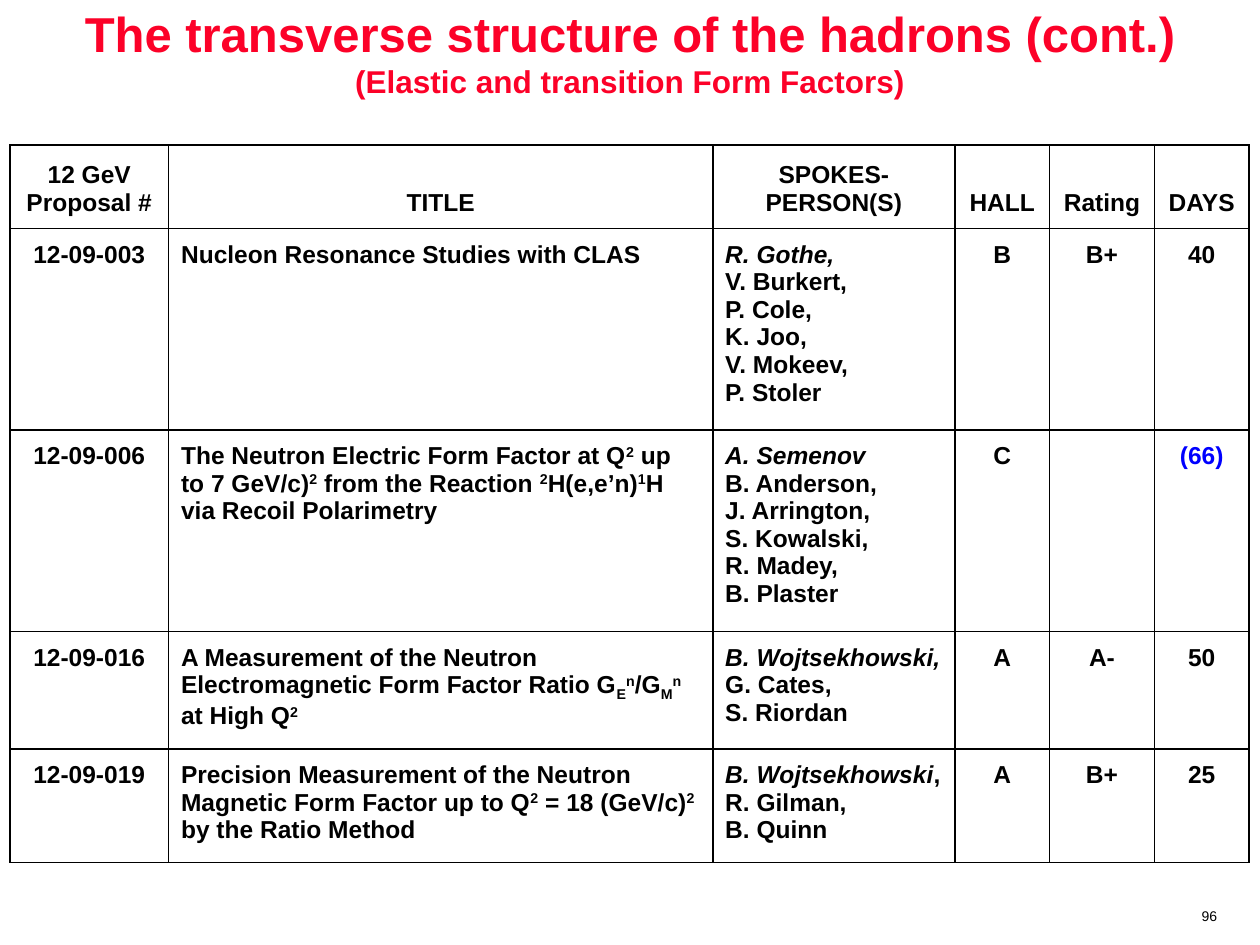
from lxml import etree
from pptx import Presentation
from pptx.dml.color import RGBColor
from pptx.enum.text import MSO_ANCHOR, MSO_AUTO_SIZE, PP_ALIGN
from pptx.oxml.ns import qn
from pptx.util import Cm, Pt

CENTER, LEFT = PP_ALIGN.CENTER, PP_ALIGN.LEFT
TOP, MIDDLE, BOTTOM = MSO_ANCHOR.TOP, MSO_ANCHOR.MIDDLE, MSO_ANCHOR.BOTTOM
NO_AUTOFIT = MSO_AUTO_SIZE.NONE

COLORS = {"heading": "FC0128", "text": "000000", "pending": "0000FF", "border": "000000"}
FONT = "Arial"
BASELINES = {"^": "30000", "_": "-25000"}

HEADING = "The transverse structure of the hadrons (cont.)"
SUBHEADING = "(Elastic and transition Form Factors)"
PAGE_NUMBER = "96"

COLUMNS = [
    ("12 GeV Proposal #", 3.2, CENTER),
    ("TITLE", 10.97, LEFT),
    ("SPOKES-PERSON(S)", 4.88, LEFT),
    ("HALL", 1.91, CENTER),
    ("Rating", 2.11, CENTER),
    ("DAYS", 1.91, CENTER),
]
# "|" separates runs; a run opens with ^ for superscript, _ for subscript, * for italic
PROPOSALS = [
    ("12-09-003", "Nucleon Resonance Studies with CLAS",
     "*R. Gothe,\nV. Burkert,\nP. Cole,\nK. Joo,\nV. Mokeev,\nP. Stoler", "B", "B+", "40"),
    ("12-09-006",
     "The Neutron Electric Form Factor at Q|^2| up to 7 GeV/c)|^2| from the Reaction "
     "|^2|H(e,e’n)|^1|H via Recoil Polarimetry",
     "*A. Semenov\nB. Anderson,\nJ. Arrington,\nS. Kowalski,\nR. Madey,\nB. Plaster", "C", "", "(66)"),
    ("12-09-016",
     "A Measurement of the Neutron Electromagnetic Form Factor Ratio G|_E|^n|/G|_M|^n| at High Q|^2",
     "*B. Wojtsekhowski,\nG. Cates,\nS. Riordan", "A", "A-", "50"),
    ("12-09-019",
     "Precision Measurement of the Neutron Magnetic Form Factor up to Q|^2| = 18 (GeV/c)|^2"
     "| by the Ratio Method",
     "*B. Wojtsekhowski|,\nR. Gilman,\nB. Quinn", "A", "B+", "25"),
]
ROW_HEIGHTS = [1.69, 4.06, 4.06, 2.37, 2.29]


def style(font, size, color, bold=False):
    font.name, font.size, font.bold = FONT, Pt(size), bold
    font.color.rgb = RGBColor.from_string(COLORS[color])


def add_runs(paragraph, marked_text):
    for part in marked_text.split("|"):
        run = paragraph.add_run()
        run.text = part.lstrip("^_*")
        if part[0] in BASELINES:
            run.font._element.set("baseline", BASELINES[part[0]])
        elif part[0] == "*":
            run.font.italic = True


def add_borders(cell):
    properties = cell._tc.get_or_add_tcPr()
    for side in ("lnL", "lnR", "lnT", "lnB"):
        line = etree.SubElement(properties, qn(f"a:{side}"), w=str(Pt(1)))
        fill = etree.SubElement(line, qn("a:solidFill"))
        etree.SubElement(fill, qn("a:srgbClr"), val=COLORS["border"])


def fill_cell(cell, marked_text, align, anchor):
    add_borders(cell)
    cell.fill.background()
    cell.margin_left = cell.margin_right = cell.margin_top = cell.margin_bottom = Cm(0.25)
    cell.vertical_anchor = anchor
    color = "pending" if marked_text.startswith("(") else "text"
    for index, line in enumerate(marked_text.split("\n")):
        frame = cell.text_frame
        paragraph = frame.add_paragraph() if index else frame.paragraphs[0]
        paragraph.alignment = align
        style(paragraph.font, 14, color, True)
        if line:
            add_runs(paragraph, line)


def add_heading(slide):
    title = slide.shapes.title
    title.left, title.top, title.width, title.height = Cm(0), Cm(0), Cm(25.4), Cm(2.08)
    frame = title.text_frame
    frame.auto_size, frame.word_wrap, frame.vertical_anchor = NO_AUTOFIT, True, MIDDLE
    paragraph = frame.paragraphs[0]
    paragraph.alignment = CENTER
    style(paragraph.font, 28, "heading", True)
    paragraph.add_run().text = HEADING
    paragraph.add_line_break()
    subheading = paragraph.add_run()
    subheading.text = SUBHEADING
    subheading.font.size = Pt(18)


def add_proposals(slide):
    widths = [width for _, width, _ in COLUMNS]
    table = slide.shapes.add_table(
        len(ROW_HEIGHTS), len(COLUMNS), Cm(0.2), Cm(2.92), Cm(sum(widths)), Cm(sum(ROW_HEIGHTS))
    ).table
    table.horz_banding = table.first_row = False
    for row, height in zip(table.rows, ROW_HEIGHTS):
        row.height = Cm(height)
    for col, (label, width, align) in enumerate(COLUMNS):
        table.columns[col].width = Cm(width)
        fill_cell(table.cell(0, col), label, CENTER, BOTTOM)
        for row, proposal in enumerate(PROPOSALS, 1):
            fill_cell(table.cell(row, col), proposal[col], align, TOP)


def add_page_number(slide):
    frame = slide.shapes.add_textbox(Cm(23.95), Cm(18.24), Cm(0.86), Cm(0.53)).text_frame
    frame.word_wrap = False
    paragraph = frame.paragraphs[0]
    paragraph.text, paragraph.alignment, paragraph.line_spacing = PAGE_NUMBER, CENTER, 0.8
    style(paragraph.font, 8, "text")


def main():
    deck = Presentation()
    deck.slide_width, deck.slide_height = Cm(25.4), Cm(19.05)
    slide = deck.slides.add_slide(deck.slide_layouts[5])
    add_heading(slide)
    add_proposals(slide)
    add_page_number(slide)
    deck.save("out.pptx")


if __name__ == "__main__":
    main()
